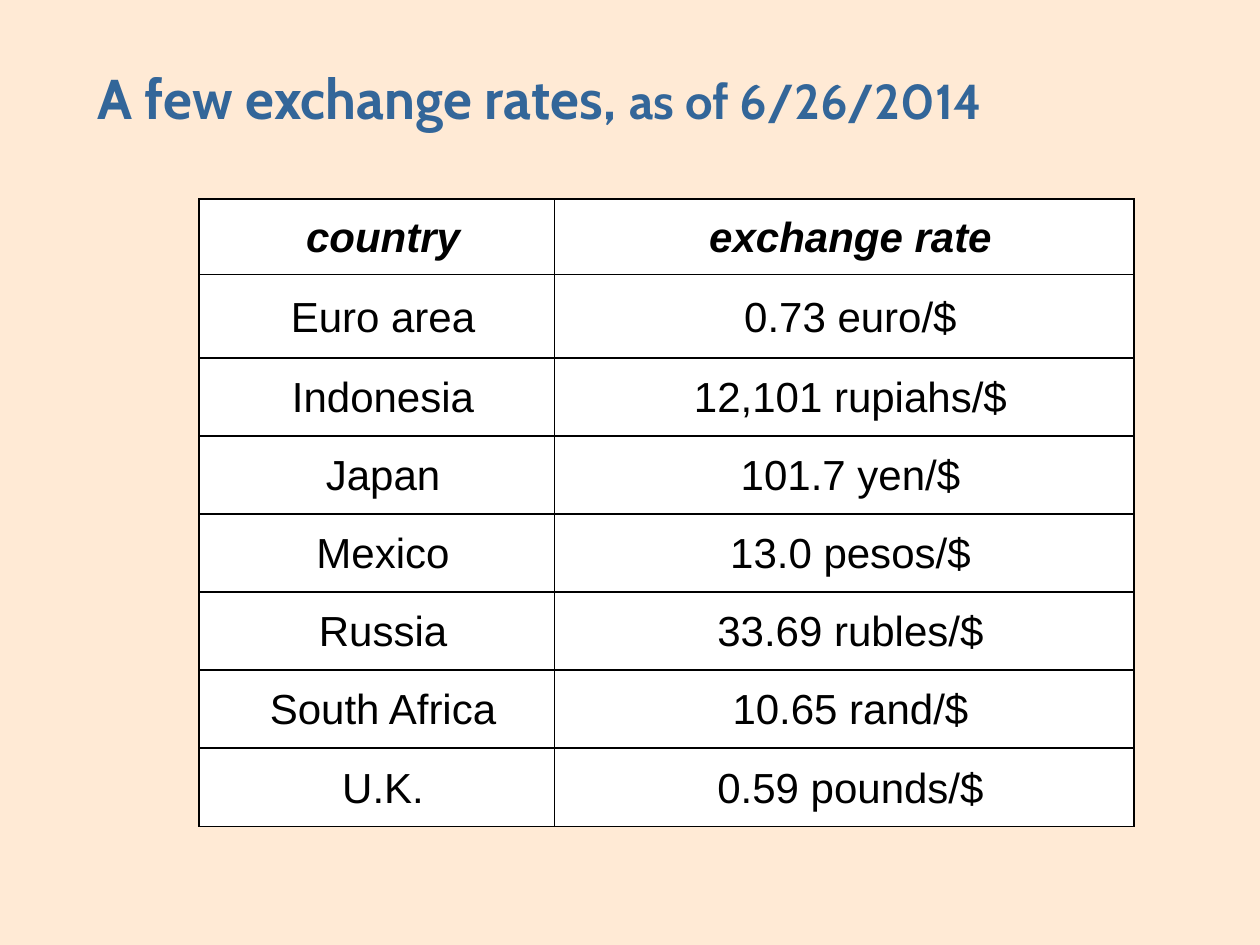
from dataclasses import dataclass

from lxml import etree
from pptx import Presentation
from pptx.dml.color import RGBColor
from pptx.enum.text import MSO_ANCHOR, MSO_AUTO_SIZE, PP_ALIGN
from pptx.oxml.ns import qn
from pptx.util import Inches, Pt

LEFT, CENTER = PP_ALIGN.LEFT, PP_ALIGN.CENTER
MIDDLE = MSO_ANCHOR.MIDDLE
NO_AUTOFIT = MSO_AUTO_SIZE.NONE
TITLE_ONLY = 5


@dataclass(frozen=True)
class Theme:
    background: str = "FFEAD5"
    title: str = "336699"
    text: str = "000000"
    cell: str = "FFFFFF"
    border: str = "000000"
    title_font: str = "Cabin"
    body_font: str = "Arial"
    title_size: int = 32
    date_size: int = 28
    body_size: int = 24
    border_width: int = 1
    line_spacing: float = 1.05


THEME = Theme()

TITLE_RUNS = [
    ("A few exchange rates, ", THEME.title_size),
    ("as of 6/26/2014", THEME.date_size),
]
RATES = [
    ("country", "exchange rate"),
    ("Euro area", "0.73 euro/$"),
    ("Indonesia", "12,101 rupiahs/$"),
    ("Japan", "101.7 yen/$"),
    ("Mexico", "13.0 pesos/$"),
    ("Russia", "33.69 rubles/$"),
    ("South Africa", "10.65 rand/$"),
    ("U.K.", "0.59 pounds/$"),
]
COL_WIDTHS = [2.82, 4.6]
ROW_HEIGHTS = [0.6, 0.66] + [0.62] * 6


def set_attrs(obj, values):
    for name, value in values.items():
        setattr(obj, name, value)


def add_run(p, text, color, **font):
    r = p.add_run()
    r.text = text
    set_attrs(r.font, font)
    r.font.color.rgb = RGBColor.from_string(color)


def add_title(slide):
    sp = slide.shapes.title
    set_attrs(sp, {"left": Inches(0.77), "top": Inches(0.24),
                   "width": Inches(8.76), "height": Inches(1.03)})
    tf = sp.text_frame
    set_attrs(tf, {"margin_left": 0, "margin_right": 0, "margin_top": 0,
                   "margin_bottom": 0, "vertical_anchor": MIDDLE,
                   "word_wrap": True, "auto_size": NO_AUTOFIT})
    p = tf.paragraphs[0]
    set_attrs(p, {"alignment": LEFT, "line_spacing": THEME.line_spacing})
    for text, size in TITLE_RUNS:
        add_run(p, text, THEME.title, name=THEME.title_font,
                size=Pt(size), bold=True)


def set_borders(cell):
    tc_pr = cell._tc.get_or_add_tcPr()
    for side in ("a:lnL", "a:lnR", "a:lnT", "a:lnB"):
        ln = etree.SubElement(tc_pr, qn(side), w=str(Pt(THEME.border_width)))
        fill = etree.SubElement(ln, qn("a:solidFill"))
        etree.SubElement(fill, qn("a:srgbClr"), val=THEME.border)


def format_cell(cell, text, header):
    set_attrs(cell, {"margin_left": Inches(0.2), "margin_right": Inches(0.1),
                     "margin_top": Inches(0.05), "margin_bottom": Inches(0.05),
                     "vertical_anchor": MIDDLE})
    # Borders come before the fill in the cell properties
    set_borders(cell)
    cell.fill.solid()
    cell.fill.fore_color.rgb = RGBColor.from_string(THEME.cell)
    p = cell.text_frame.paragraphs[0]
    set_attrs(p, {"alignment": CENTER, "line_spacing": THEME.line_spacing})
    add_run(p, text, THEME.text, name=THEME.body_font,
            size=Pt(THEME.body_size), bold=header, italic=header)


def add_rate_table(slide):
    table = slide.shapes.add_table(
        len(RATES), len(COL_WIDTHS), Inches(1.58), Inches(1.58),
        Inches(sum(COL_WIDTHS)), Inches(sum(ROW_HEIGHTS))).table
    table.horz_banding = False
    for column, width in zip(table.columns, COL_WIDTHS):
        column.width = Inches(width)
    for i, (row, height) in enumerate(zip(table.rows, ROW_HEIGHTS)):
        row.height = Inches(height)
        for cell, text in zip(row.cells, RATES[i]):
            format_cell(cell, text, header=i == 0)


def main():
    prs = Presentation()
    set_attrs(prs, {"slide_width": Inches(10), "slide_height": Inches(7.5)})
    slide = prs.slides.add_slide(prs.slide_layouts[TITLE_ONLY])

    # Background
    fill = slide.background.fill
    fill.solid()
    fill.fore_color.rgb = RGBColor.from_string(THEME.background)

    # Content
    add_title(slide)
    add_rate_table(slide)
    prs.save("out.pptx")


if __name__ == "__main__":
    main()
